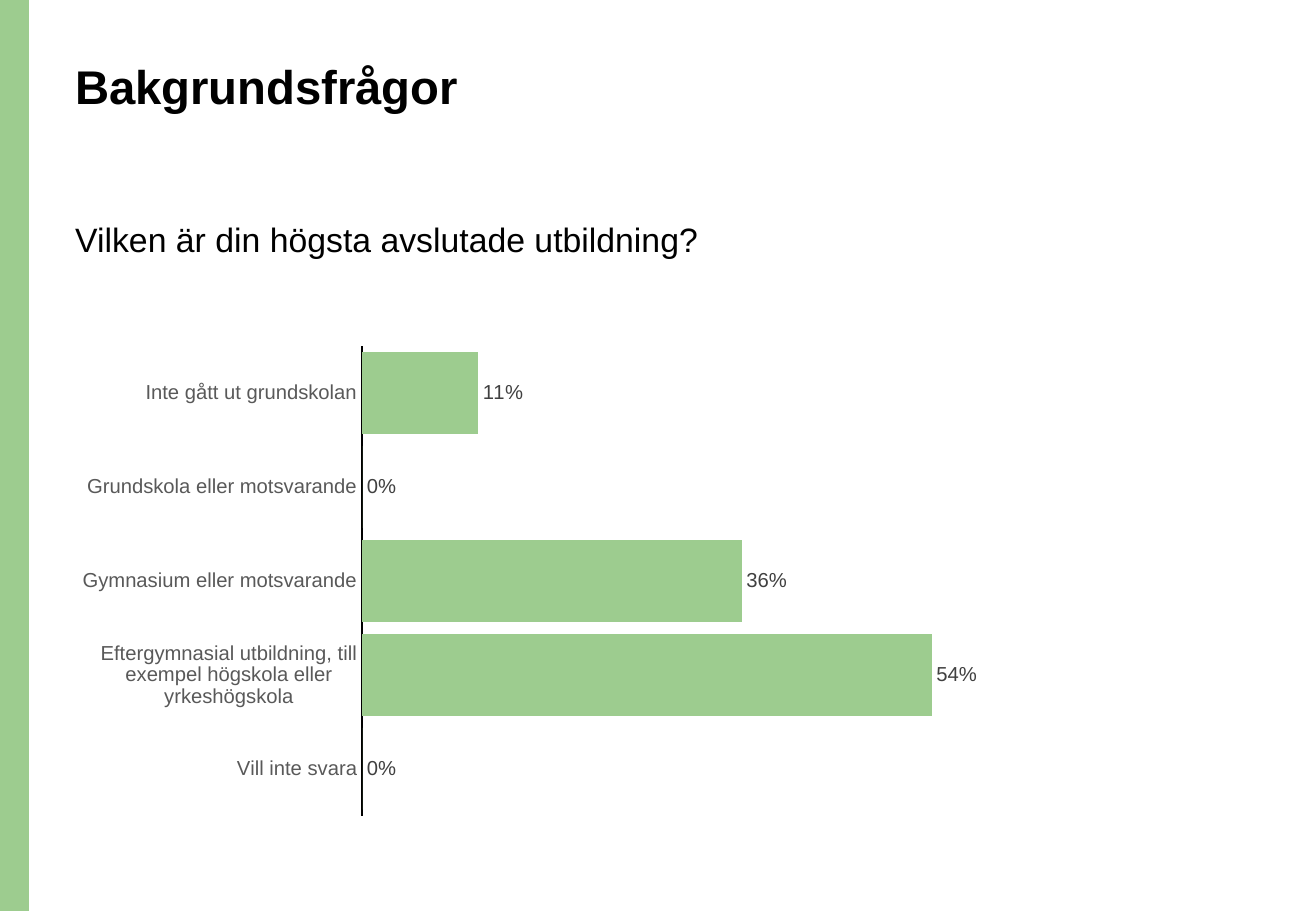
from lxml import etree
from pptx import Presentation
from pptx.chart.data import CategoryChartData
from pptx.dml.color import RGBColor
from pptx.enum.chart import XL_CHART_TYPE, XL_LABEL_POSITION, XL_TICK_MARK
from pptx.enum.shapes import MSO_SHAPE
from pptx.enum.text import MSO_ANCHOR, MSO_AUTO_SIZE, PP_ALIGN
from pptx.oxml import parse_xml
from pptx.oxml.ns import nsdecls, qn
from pptx.util import Pt

SCALE = 7526  # EMU per px
FONT = "Arial"
GREEN = "9DCC8F"
BLACK = "000000"
ANSWERS = [
    ("Inte gått ut grundskolan", 0.11),
    ("Grundskola eller motsvarande", 0),
    ("Gymnasium eller motsvarande", 0.36),
    ("Eftergymnasial utbildning, till exempel högskola eller yrkeshögskola", 0.54),
    ("Vill inte svara", 0),
]


def px(*lengths):
    return [length * SCALE for length in lengths]


def color(value):
    return RGBColor.from_string(value)


def set_font(font, size, value, bold=False):
    font.name = FONT
    font.size = Pt(size)
    font.bold = bold
    font.color.rgb = color(value)


def add_band(slide, box, fill):
    shape = slide.shapes.add_shape(MSO_SHAPE.RECTANGLE, *px(*box))
    shape.shadow.inherit = False
    shape.fill.solid()
    shape.fill.fore_color.rgb = color(fill)
    shape.line.fill.background()


def fill_placeholder(shape, box, text, size, bold=False):
    shape.left, shape.top, shape.width, shape.height = px(*box)
    frame = shape.text_frame
    frame.text = text
    frame.word_wrap = True
    frame.auto_size = MSO_AUTO_SIZE.NONE
    frame.vertical_anchor = MSO_ANCHOR.TOP
    paragraph = frame.paragraphs[0]
    paragraph.alignment = PP_ALIGN.LEFT
    paragraph.line_spacing = 0.9
    paragraph.space_before = Pt(0)
    # No bullet and no hanging indent
    properties = paragraph._p.get_or_add_pPr()
    properties.set("marL", "0")
    properties.set("indent", "0")
    etree.SubElement(properties, qn("a:buNone"))
    set_font(paragraph.font, size, BLACK, bold)


def place_plot(chart, x, y, width, height):
    """Fix the inner plot area, given as fractions of the chart."""
    plot_area = chart._chartSpace.chart.plotArea
    for layout in plot_area.findall(qn("c:layout")):
        plot_area.remove(layout)
    plot_area.insert(0, parse_xml(
        f'<c:layout {nsdecls("c")}><c:manualLayout>'
        '<c:layoutTarget val="inner"/><c:xMode val="edge"/><c:yMode val="edge"/>'
        f'<c:x val="{x:.4f}"/><c:y val="{y:.4f}"/>'
        f'<c:w val="{width:.4f}"/><c:h val="{height:.4f}"/>'
        '</c:manualLayout></c:layout>'))


def add_bar_chart(slide, box, plot_box, answers):
    data = CategoryChartData(number_format="0%")
    data.categories = [name for name, share in answers]
    data.add_series("Series 1", [share for name, share in answers])
    chart = slide.shapes.add_chart(XL_CHART_TYPE.BAR_CLUSTERED, *px(*box), data).chart
    chart.has_legend = False
    chart.has_title = False
    set_font(chart.font, 10, BLACK)

    # Axes
    category_axis = chart.category_axis
    category_axis.reverse_order = True
    category_axis.major_tick_mark = XL_TICK_MARK.NONE
    category_axis.format.line.color.rgb = color(BLACK)
    category_axis.format.line.width = Pt(0.75)
    set_font(category_axis.tick_labels.font, 12, "595959")
    value_axis = chart.value_axis
    value_axis.minimum_scale = 0
    value_axis.maximum_scale = 0.6
    value_axis.has_major_gridlines = False
    value_axis.visible = False

    # Bars and labels
    plot = chart.plots[0]
    plot.gap_width = 15
    plot.vary_by_categories = False
    fill = plot.series[0].format.fill
    fill.solid()
    fill.fore_color.rgb = color(GREEN)
    plot.has_data_labels = True
    labels = plot.data_labels
    labels.show_value = True
    labels.number_format = "0%"
    labels.number_format_is_linked = False
    labels.position = XL_LABEL_POSITION.OUTSIDE_END
    set_font(labels.font, 12, "404040")

    left, top, width, height = box
    plot_left, plot_top, plot_width, plot_height = plot_box
    place_plot(chart, (plot_left - left) / width, (plot_top - top) / height,
               plot_width / width, plot_height / height)


def main():
    presentation = Presentation()
    presentation.slide_width, presentation.slide_height = px(1316, 911)
    slide = presentation.slides.add_slide(presentation.slide_layouts[1])

    add_band(slide, (0, 0, 29, 911), GREEN)
    fill_placeholder(slide.shapes.title, (63, 58, 1135, 124), "Bakgrundsfrågor", 28, True)
    fill_placeholder(slide.placeholders[1], (63, 217, 733, 90),
                     "Vilken är din högsta avslutade utbildning?", 20)
    add_bar_chart(slide, (63, 337, 956, 490), (362, 346, 633, 470), ANSWERS)

    presentation.save("out.pptx")


if __name__ == "__main__":
    main()
